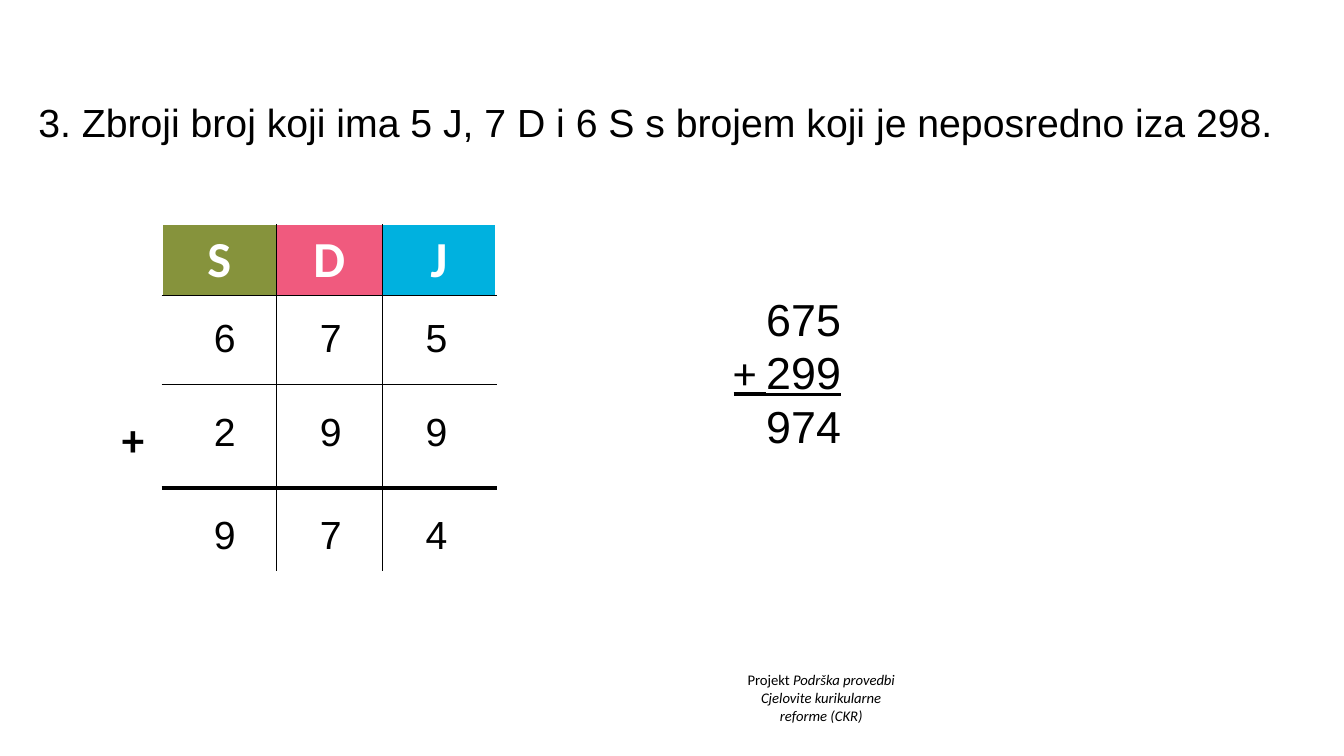
from lxml import etree
from pptx import Presentation, util as u
from pptx.dml.color import RGBColor
from pptx.enum import text
from pptx.oxml import ns

BLACK = RGBColor(0x00, 0x00, 0x00)
WHITE = RGBColor(0xFF, 0xFF, 0xFF)
OLIVE = RGBColor(0x86, 0x93, 0x3C)
PINK = RGBColor(0xF0, 0x5A, 0x7E)
CYAN = RGBColor(0x00, 0xB1, 0xDF)

HEADS = [("S", OLIVE), ("D", PINK), ("J", CYAN)]
NUMBERS = ["675", "299", "974"]
COLS = [1.13, 1.05, 1.13]
ROWS = [0.69, 0.88, 1.03, 0.83]
# Digit boxes: tops below the table's top, first centre and pitch across
DIGIT_TOPS = [0.83, 1.76, 2.78]
DIGIT_START, DIGIT_PITCH, DIGIT_SIZE = 0.62, 1.05, 0.57
# Horizontal rules from top to bottom, vertical rules from left to right
H_RULES = [(1, WHITE), (0.75, BLACK), (0.75, BLACK), (3, BLACK), (1, WHITE)]
V_RULES = [(1, WHITE), (1, BLACK), (1, BLACK), (1, WHITE)]


def style(font, size, name="Arial", color=BLACK, bold=False):
    font.size, font.name, font.bold = u.Pt(size), name, bold
    font.color.rgb = color


def add_text(slide, box, align=text.PP_ALIGN.CENTER):
    """Empty wrapping text box; returns its first paragraph."""
    tf = slide.shapes.add_textbox(*map(u.Inches, box)).text_frame
    tf.word_wrap = True
    p = tf.paragraphs[0]
    p.alignment = align
    return p


def add_runs(p, *runs):
    for words, size, name in runs:
        r = p.add_run()
        r.text = words
        style(r.font, size, name)


def set_border(cell, side, rule):
    width, color = rule
    ln = etree.SubElement(cell._tc.get_or_add_tcPr(), ns.qn(f"a:ln{side}"),
                          w=str(u.Pt(width)))
    fill = etree.SubElement(ln, ns.qn("a:solidFill"))
    etree.SubElement(fill, ns.qn("a:srgbClr"), val=str(color))


def add_title(slide, box):
    sp = slide.shapes.title
    sp.left, sp.top, sp.width, sp.height = map(u.Inches, box)
    tf = sp.text_frame
    tf.text = "3. Zbroji broj koji ima 5 J, 7 D i 6 S s brojem koji je neposredno iza 298."
    tf.vertical_anchor = text.MSO_ANCHOR.TOP
    tf.auto_size = text.MSO_AUTO_SIZE.NONE
    p = tf.paragraphs[0]
    p.alignment = text.PP_ALIGN.CENTER
    style(p.font, 28)


def add_place_value_table(slide, left, top):
    frame = slide.shapes.add_table(len(ROWS), len(COLS), u.Inches(left), u.Inches(top),
                                   u.Inches(sum(COLS)), u.Inches(sum(ROWS)))
    table = frame.table
    table.first_row = table.horz_banding = False
    for col, width in zip(table.columns, COLS):
        col.width = u.Inches(width)
    for i, height in enumerate(ROWS):
        table.rows[i].height = u.Inches(height)
        for j, (head, color) in enumerate(HEADS):
            cell = table.cell(i, j)
            for side, rule in (("L", V_RULES[j]), ("R", V_RULES[j + 1]),
                               ("T", H_RULES[i]), ("B", H_RULES[i + 1])):
                set_border(cell, side, rule)
            cell.fill.solid()
            cell.fill.fore_color.rgb = WHITE if i else color
            if i == 0:
                cell.text = head
                cell.vertical_anchor = text.MSO_ANCHOR.MIDDLE
                p = cell.text_frame.paragraphs[0]
                p.alignment = text.PP_ALIGN.CENTER
                style(p.font, 36, "Calibri", WHITE, True)

    # Digits over the cells, and the plus sign beside the second number
    for number, offset in zip(NUMBERS, DIGIT_TOPS):
        for j, digit in enumerate(number):
            x = left + DIGIT_START + j * DIGIT_PITCH - DIGIT_SIZE / 2
            p = add_text(slide, (x, top + offset, DIGIT_SIZE, DIGIT_SIZE))
            p.text = digit
            style(p.font, 28)
    p = add_text(slide, (left - 0.5, top + 1.81, 0.5, 0.64), text.PP_ALIGN.LEFT)
    p.text = "+"
    style(p.font, 32, "Calibri", bold=True)


def add_column_sum(slide, box):
    first, second, total = NUMBERS
    p = add_text(slide, box, text.PP_ALIGN.RIGHT)
    tf = p._parent
    add_runs(p, (first, 32, "Arial"))
    p = tf.add_paragraph()
    p.alignment = text.PP_ALIGN.RIGHT
    add_runs(p, ("+ ", 32, "Calibri"), (second, 32, "Arial"))
    for r in p.runs:
        r.font.underline = True
    p = tf.add_paragraph()
    p.alignment = text.PP_ALIGN.RIGHT
    add_runs(p, (total, 32, "Arial"))


def add_project_note(slide, box):
    p = add_text(slide, box)
    add_runs(p, ("Projekt ", 10.5, "Calibri"), ("Podrška provedbi", 10.5, "Calibri"))
    p.runs[1].font.italic = True
    p = p._parent.add_paragraph()
    p.alignment = text.PP_ALIGN.CENTER
    add_runs(p, ("Cjelovite kurikularne", 10.5, "Calibri"))
    p.add_line_break()
    add_runs(p, ("reforme (CKR)", 10.5, "Calibri"))
    for r in p.runs:
        r.font.italic = True


def main():
    prs = Presentation()
    prs.slide_width, prs.slide_height = u.Inches(13.33), u.Inches(7.5)
    slide = prs.slides.add_slide(prs.slide_layouts[5])
    add_project_note(slide, (6.99, 6.61, 2.31, 0.63))
    add_title(slide, (0.11, 0.93, 12.78, 0.95))
    add_place_value_table(slide, 1.61, 2.23)
    add_column_sum(slide, (6.64, 2.84, 1.8, 1.7))
    prs.save("out.pptx")


if __name__ == "__main__":
    main()
